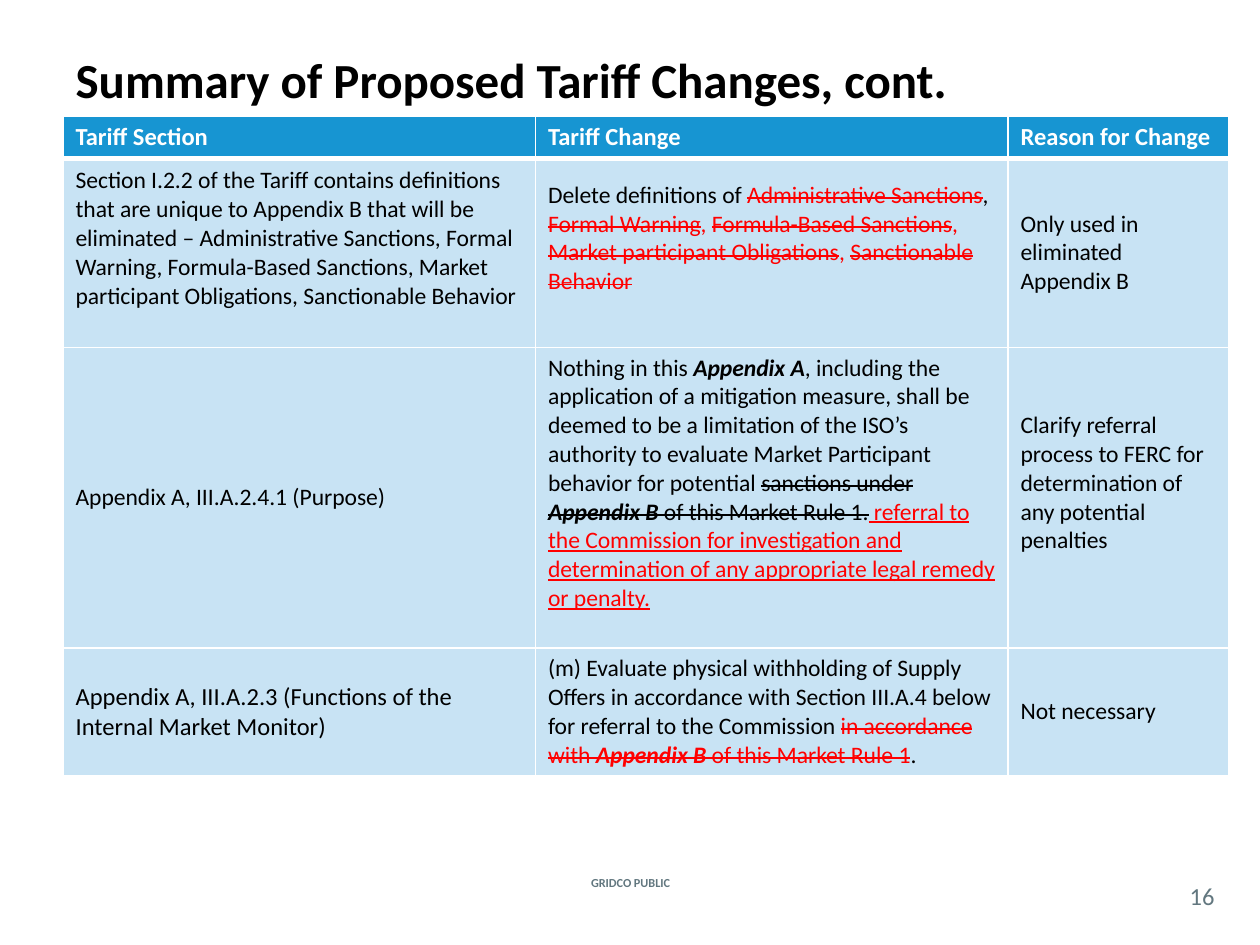
from lxml import etree
from pptx import Presentation
from pptx.dml.color import RGBColor
from pptx.enum import text
from pptx.oxml import ns
from pptx.util import Inches, Pt

BLACK, WHITE, RED, GREY = "000000", "FFFFFF", "FF0000", "62777F"
HEADER_BLUE, PALE_BLUE = "1795D2", "C8E3F4"
FONT = "Calibri"
BODY_SIZE = 13.5
COLUMN_WIDTHS = (3.75, 3.75, 1.75)
ROW_HEIGHTS = (0.33, 1.5, 2.38, 1.01)
# One line of free space under the text of these cells (row, column)
RAISED_CELLS = {(1, 0), (1, 1), (2, 1), (2, 2)}

# Cells are lists of (words, marks): r red, s strike, u underline, e bold italic
HEADINGS = ("Tariff Section", "Tariff Change", "Reason for Change")
CHANGES = [
    (
        [("Section I.2.2 of the Tariff contains definitions that are unique to "
          "Appendix B that will be eliminated – Administrative Sanctions, Formal "
          "Warning, Formula-Based Sanctions, Market participant Obligations, "
          "Sanctionable Behavior", "")],
        [("Delete definitions of ", ""), ("Administrative Sanctions", "rs"),
         (", ", ""), ("Formal Warning", "rs"), (", ", "r"),
         ("Formula-Based Sanctions", "rs"), (", ", "r"),
         ("Market participant Obligations", "rs"), (", ", "r"),
         ("Sanctionable Behavior", "rs")],
        [("Only used in eliminated Appendix B", "")],
    ),
    (
        [("Appendix A, III.A.2.4.1 (Purpose)", "")],
        [("Nothing in this ", ""), ("Appendix A", "e"),
         (", including the application of a mitigation measure, shall be deemed "
          "to be a limitation of the ISO’s authority to evaluate Market "
          "Participant behavior for potential ", ""),
         ("sanctions under ", "s"), ("Appendix B", "se"),
         (" of this Market Rule 1.", "s"),
         (" referral to the Commission for investigation and determination of "
          "any appropriate legal remedy or penalty.", "ru")],
        [("Clarify referral process to FERC for determination of any potential "
          "penalties", "")],
    ),
    (
        [("Appendix A, III.A.2.3 (Functions of the Internal Market Monitor)", "")],
        [("(m) Evaluate physical withholding of Supply Offers in accordance with "
          "Section III.A.4 below for referral to the Commission ", ""),
         ("in accordance with ", "rs"), ("Appendix B", "rse"),
         (" of this Market Rule 1", "rs"), (".", "")],
        [("Not necessary", "")],
    ),
]


def rgb(value):
    return RGBColor.from_string(value)


def format_font(font, size, color, bold=False):
    font.name, font.size, font.bold = FONT, Pt(size), bold
    font.color.rgb = rgb(color)


def add_title(slide, box, words):
    title = slide.shapes.title
    title.left, title.top, title.width, title.height = map(Inches, box)
    frame = title.text_frame
    frame.text = words
    frame.auto_size = text.MSO_AUTO_SIZE.NONE
    frame.vertical_anchor = text.MSO_ANCHOR.MIDDLE
    paragraph = frame.paragraphs[0]
    paragraph.alignment = text.PP_ALIGN.LEFT
    format_font(paragraph.runs[0].font, 28, BLACK, bold=True)


def add_label(slide, box, words, size, bold=False):
    frame = slide.shapes.add_textbox(*map(Inches, box)).text_frame
    frame.word_wrap = True
    frame.margin_left = frame.margin_right = 0
    frame.margin_top = frame.margin_bottom = 0
    frame.vertical_anchor = text.MSO_ANCHOR.MIDDLE
    frame.text = words
    paragraph = frame.paragraphs[0]
    paragraph.alignment = text.PP_ALIGN.CENTER
    format_font(paragraph.runs[0].font, size, GREY, bold)


def style_cell(cell, fill, top_width=1, bottom_width=1):
    # Borders come before the fill in the cell properties
    properties = cell._tc.get_or_add_tcPr()
    widths = {"lnL": 1, "lnR": 1, "lnT": top_width, "lnB": bottom_width}
    for side, width in widths.items():
        line = etree.SubElement(properties, ns.qn(f"a:{side}"), w=str(Pt(width)))
        solid = etree.SubElement(line, ns.qn("a:solidFill"))
        etree.SubElement(solid, ns.qn("a:srgbClr"), val=WHITE)
    cell.fill.solid()
    cell.fill.fore_color.rgb = rgb(fill)
    cell.vertical_anchor = text.MSO_ANCHOR.MIDDLE


def write_marked(cell, pieces, size):
    paragraph = cell.text_frame.paragraphs[0]
    for words, marks in pieces:
        run = paragraph.add_run()
        run.text = words
        format_font(run.font, size, RED if "r" in marks else BLACK, "e" in marks)
        run.font.italic = "e" in marks
        run.font.underline = "u" in marks
        if "s" in marks:
            run.font._element.set("strike", "sngStrike")


def add_changes_table(slide, left, top):
    table = slide.shapes.add_table(
        len(ROW_HEIGHTS), len(COLUMN_WIDTHS), Inches(left), Inches(top),
        Inches(sum(COLUMN_WIDTHS)), Inches(sum(ROW_HEIGHTS))).table
    table.horz_banding = False
    for column, width in zip(table.columns, COLUMN_WIDTHS):
        column.width = Inches(width)
    for row, height in zip(table.rows, ROW_HEIGHTS):
        row.height = Inches(height)

    # Header row
    for c, heading in enumerate(HEADINGS):
        cell = table.cell(0, c)
        style_cell(cell, HEADER_BLUE, bottom_width=3)
        cell.text_frame.text = heading
        format_font(cell.text_frame.paragraphs[0].runs[0].font, 14, WHITE, bold=True)

    # Change rows
    for r, change in enumerate(CHANGES, start=1):
        for c, pieces in enumerate(change):
            cell = table.cell(r, c)
            style_cell(cell, PALE_BLUE, top_width=3 if r == 1 else 1)
            write_marked(cell, pieces, 14 if (r, c) == (3, 0) else BODY_SIZE)
            if (r, c) in RAISED_CELLS:
                cell.margin_bottom = Inches(0.28)


def main():
    deck = Presentation()
    deck.slide_width, deck.slide_height = Inches(10), Inches(7.5)
    slide = deck.slides.add_slide(deck.slide_layouts[5])

    add_title(slide, (0.5, 0, 9, 1.25), "Summary of Proposed Tariff Changes, cont.")
    add_changes_table(slide, 0.5, 0.92)

    # Footer
    add_label(slide, (4.27, 6.92, 1.47, 0.17), "GRIDCO PUBLIC", 7, bold=True)
    add_label(slide, (9.33, 6.96, 0.42, 0.29), "16", 14)

    deck.save("out.pptx")


if __name__ == "__main__":
    main()
